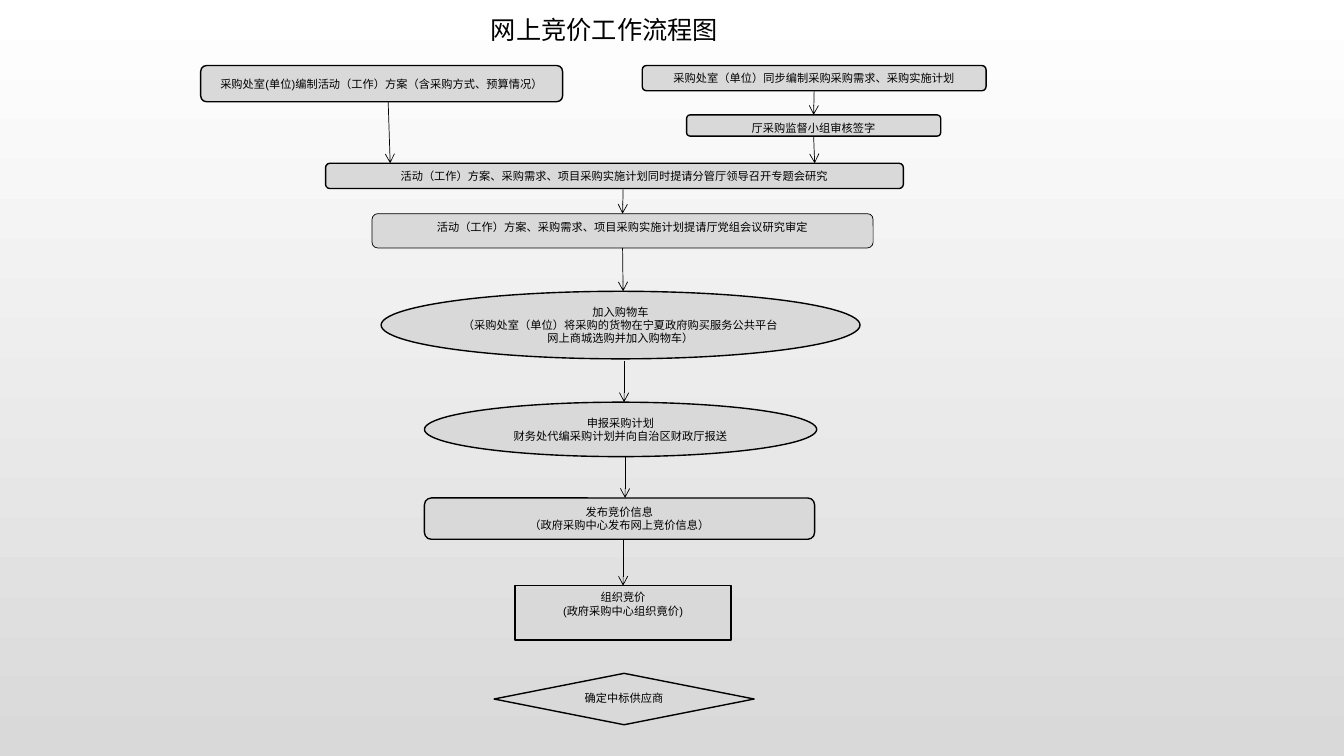
import pptx
import pptx.util
import pptx.dml.color
import pptx.enum.shapes
import pptx.enum.text
import pptx.oxml
import pptx.oxml.ns

Inches, Pt = pptx.util.Inches, pptx.util.Pt
KIND = pptx.enum.shapes.MSO_SHAPE
ANCHOR = pptx.enum.text.MSO_ANCHOR
TOP, BOTTOM = 0, 2


def paint(target, color):
    """Give a fill or line a solid colour."""
    target.solid()
    target.fore_color.rgb = pptx.dml.color.RGBColor.from_string(color)


def write(shape, text, size, anchor):
    """Write centred black Arial text into a shape."""
    frame = shape.text_frame
    frame.text = text
    frame.word_wrap = True
    frame.vertical_anchor = anchor
    for para in frame.paragraphs:
        para.alignment = pptx.enum.text.PP_ALIGN.CENTER
        for run in para.runs:
            run.font.name = "Arial"
            run.font.size = Pt(size)
            paint(run.font.fill, "000000")


def step(slide, kind, box, text, anchor=ANCHOR.TOP, width=1):
    """Add one grey step of the flow."""
    shape = slide.shapes.add_shape(kind, *map(Inches, box))
    shape.shadow.inherit = False
    paint(shape.fill, "D9D9D9")
    paint(shape.line.fill, "000000")
    shape.line.width = Pt(width)
    write(shape, text, 8, anchor)
    return shape


def arrow(slide, start, end, source=None, target=None):
    """Add an arrow, joined to the given steps."""
    line = slide.shapes.add_connector(
        pptx.enum.shapes.MSO_CONNECTOR.STRAIGHT, *map(Inches, start + end))
    paint(line.line.fill, "000000")
    line.line.width = Pt(0.5)
    if source is not None:
        line.begin_connect(source, BOTTOM)
    if target is not None:
        line.end_connect(target, TOP)
    stroke = line.line._get_or_add_ln()
    stroke.append(pptx.oxml.parse_xml(
        f'<a:tailEnd {pptx.oxml.ns.nsdecls("a")} type="arrow"/>'))
    line._element.spPr.append(pptx.oxml.parse_xml(
        f'<a:effectLst {pptx.oxml.ns.nsdecls("a")}/>'))


def draw_back(slide):
    """Fill the background from white down to grey."""
    fill = slide.background.fill
    fill.gradient()
    fill.gradient_angle = 270
    for stop, place, color in zip(fill.gradient_stops, (0, 1), ("FFFFFF", "D9D9D9")):
        stop.position = place
        stop.color.rgb = pptx.dml.color.RGBColor.from_string(color)


def draw_title(slide, box):
    """Place the title."""
    title = slide.shapes.title
    title.left, title.top, title.width, title.height = map(Inches, box)
    write(title, "网上竞价工作流程图", 18, ANCHOR.TOP)
    title.text_frame.auto_size = pptx.enum.text.MSO_AUTO_SIZE.SHAPE_TO_FIT_TEXT


def draw_plan(slide, box):
    """Draw the two planning branches."""
    x, y, wide, high = box
    right = x + wide
    step(slide, KIND.ROUNDED_RECTANGLE, (x, y, 3.59, 0.36),
         "采购处室(单位)编制活动（工作）方案（含采购方式、预算情况）", ANCHOR.MIDDLE)
    need = step(slide, KIND.ROUNDED_RECTANGLE, (right - 3.41, y, 3.41, 0.25),
                "采购处室（单位）同步编制采购采购需求、采购实施计划")
    check = step(slide, KIND.ROUNDED_RECTANGLE, (right - 2.97, y + 0.49, 2.52, 0.21),
                 "厅采购监督小组审核签字")
    arrow(slide, (x + 1.86, y + 0.36), (x + 1.88, y + high))
    arrow(slide, (right - 1.7, y + 0.25), (right - 1.71, y + 0.49), need, check)
    arrow(slide, (right - 1.71, y + 0.7), (right - 1.7, y + high), check)


def draw_review(slide, box):
    """Draw the two review meetings."""
    x, y, wide, high = box
    step(slide, KIND.ROUNDED_RECTANGLE, (x, y, wide, 0.25),
         "活动（工作）方案、采购需求、项目采购实施计划同时提请分管厅领导召开专题会研究")
    party = step(slide, KIND.ROUNDED_RECTANGLE, (x + 0.46, y + 0.5, 4.97, 0.34),
                 "活动（工作）方案、采购需求、项目采购实施计划提请厅党组会议研究审定", width=0.5)
    arrow(slide, (x + 2.95, y + 0.26), (x + 2.95, y + 0.5), target=party)
    arrow(slide, (x + 2.96, y + 0.84), (x + 2.95, y + high), source=party)


def draw_bid(slide, box):
    """Draw the ordering and bidding steps."""
    x, y, wide, high = box
    step(slide, KIND.OVAL, (x, y, wide, 0.67),
         "加入购物车\n（采购处室（单位）将采购的货物在宁夏政府购买服务公共平台网上商城选购并加入购物车）",
         ANCHOR.MIDDLE)
    step(slide, KIND.OVAL, (x + 0.43, y + 1.1, 3.89, 0.54),
         "申报采购计划\n财务处代编采购计划并向自治区财政厅报送", ANCHOR.MIDDLE)
    step(slide, KIND.ROUNDED_RECTANGLE, (x + 0.43, y + 2.05, 3.87, 0.41),
         "发布竞价信息\n（政府采购中心发布网上竞价信息）")
    bid = step(slide, KIND.RECTANGLE, (x + 1.33, y + 2.92, 2.14, 0.54),
               "组织竞价\n(政府采购中心组织竟价)")
    step(slide, KIND.DIAMOND, (x + 1.12, y + high - 0.51, 2.58, 0.51), "确定中标供应商")
    for across, start, end, target in ((2.41, 0.69, 1.1, None),
                                       (2.42, 1.63, 2.05, None),
                                       (2.4, 2.46, 2.92, bid)):
        arrow(slide, (x + across, y + start), (x + across, y + end), target=target)


def main():
    """Build and save the slide."""
    deck = pptx.Presentation()
    deck.slide_width, deck.slide_height = Inches(13.33), Inches(7.5)
    slide = deck.slides.add_slide(deck.slide_layouts[5])
    draw_back(slide)
    draw_title(slide, (3.33, 0.09, 5.33, 0.4))
    draw_plan(slide, (1.99, 0.65, 7.79, 0.97))
    draw_review(slide, (3.23, 1.62, 5.73, 1.27))
    draw_bid(slide, (3.78, 2.89, 4.75, 4.3))
    deck.save("out.pptx")


if __name__ == "__main__":
    main()
